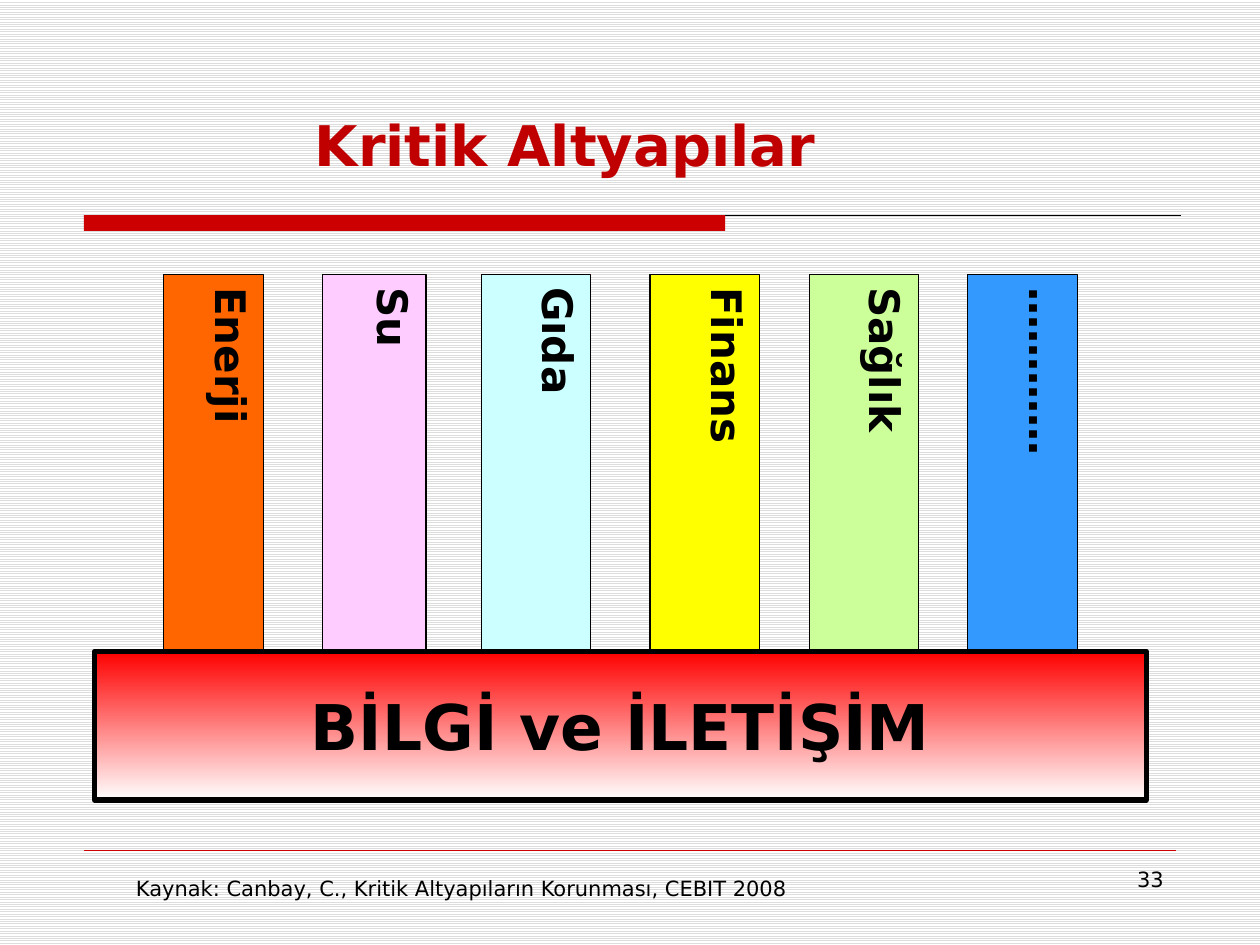
from pptx import Presentation
from pptx import util as u
from pptx.dml import color
from pptx.enum import dml, shapes, text
from pptx.oxml import xmlchemy

FONT = "DejaVu Sans"
PILLAR_TOP, BASE_TOP = 157, 372.2
PILLARS = [
    ("Enerji", 93.6, 57, "FF6600"),
    ("Su", 184.3, 59.2, "FFCCFF"),
    ("Gıda", 275, 62.6, "CCFFFF"),
    ("Finans", 371.5, 62.6, "FFFF00"),
    ("Sağlık", 462.7, 62, "CCFF99"),
    ("…………", 553, 62.6, "3399FF"),
]


def rgb(value):
    return color.RGBColor.from_string(value)


def points(*values):
    return [u.Pt(value) for value in values]


def write(shape, words, size, bold=False, ink="000000",
          align=text.PP_ALIGN.LEFT, anchor=text.MSO_ANCHOR.TOP):
    frame = shape.text_frame
    frame.word_wrap = True
    frame.vertical_anchor = anchor
    para = frame.paragraphs[0]
    para.alignment = align
    span = para.add_run()
    span.text = words
    span.font.name = FONT
    span.font.size = u.Pt(size)
    span.font.bold = bold
    span.font.color.rgb = rgb(ink)


def add_label(page, place, words, size, **style):
    box = page.shapes.add_textbox(*points(*place))
    write(box, words, size, **style)


def add_block(page, place, fill, line_width):
    block = page.shapes.add_shape(shapes.MSO_SHAPE.RECTANGLE, *points(*place))
    block.shadow.inherit = False
    block.fill.solid()
    block.fill.fore_color.rgb = rgb(fill)
    if line_width:
        block.line.color.rgb = rgb("000000")
        block.line.width = u.Pt(line_width)
    else:
        block.line.fill.background()
    return block


def add_rule(page, left, right, top, ink, width):
    rule = page.shapes.add_connector(
        shapes.MSO_CONNECTOR.STRAIGHT, *points(left, top, right, top))
    rule.line.color.rgb = rgb(ink)
    rule.line.width = u.Pt(width)
    properties = rule._element.spPr
    properties.append(xmlchemy.OxmlElement("a:effectLst"))


def add_pillar(page, words, left, width, fill):
    place = (left, PILLAR_TOP, width, BASE_TOP - PILLAR_TOP)
    pillar = add_block(page, place, fill, 0.75)
    write(pillar, words, 24, bold=True)
    pillar.text_frame._txBody.bodyPr.set("vert", "eaVert")


def add_base(page, words):
    base = add_block(page, (54, BASE_TOP, 601, 85), "FF0000", 3)
    base.fill.gradient()
    base.fill.gradient_angle = 270
    for stop, position, ink in zip(base.fill.gradient_stops, (0, 1), ("FF0000", "FFFFFF")):
        stop.position = position
        stop.color.rgb = rgb(ink)
    write(base, words, 36, bold=True, align=text.PP_ALIGN.CENTER,
          anchor=text.MSO_ANCHOR.MIDDLE)


def set_background(page):
    fill = page.background.fill
    fill.patterned()
    fill.pattern = dml.MSO_PATTERN.LIGHT_HORIZONTAL
    fill.fore_color.rgb = rgb("DDDDDD")
    fill.back_color.rgb = rgb("FFFFFF")


def main():
    deck = Presentation()
    deck.slide_width, deck.slide_height = points(720, 540)
    page = deck.slides.add_slide(deck.slide_layouts[6])
    set_background(page)

    add_rule(page, 48, 674.6, 123, "000000", 0.5)
    add_block(page, (48, 123, 366.4, 9), "CC0000", 0)
    add_rule(page, 48, 672, 486, "CC0000", 0.25)
    add_label(page, (172.8, 54.7, 374.4, 50.4), "Kritik Altyapılar", 32,
              bold=True, ink="C00000", anchor=text.MSO_ANCHOR.BOTTOM)

    for pillar in PILLARS:
        add_pillar(page, *pillar)
    add_base(page, "BİLGİ ve İLETİŞİM")

    add_label(page, (70.6, 496.8, 561.6, 21.6),
              "Kaynak: Canbay, C., Kritik Altyapıların Korunması, CEBIT 2008", 12)
    add_label(page, (516, 491.8, 156.2, 37.4), "33", 12, align=text.PP_ALIGN.RIGHT)
    deck.save("out.pptx")


if __name__ == "__main__":
    main()
